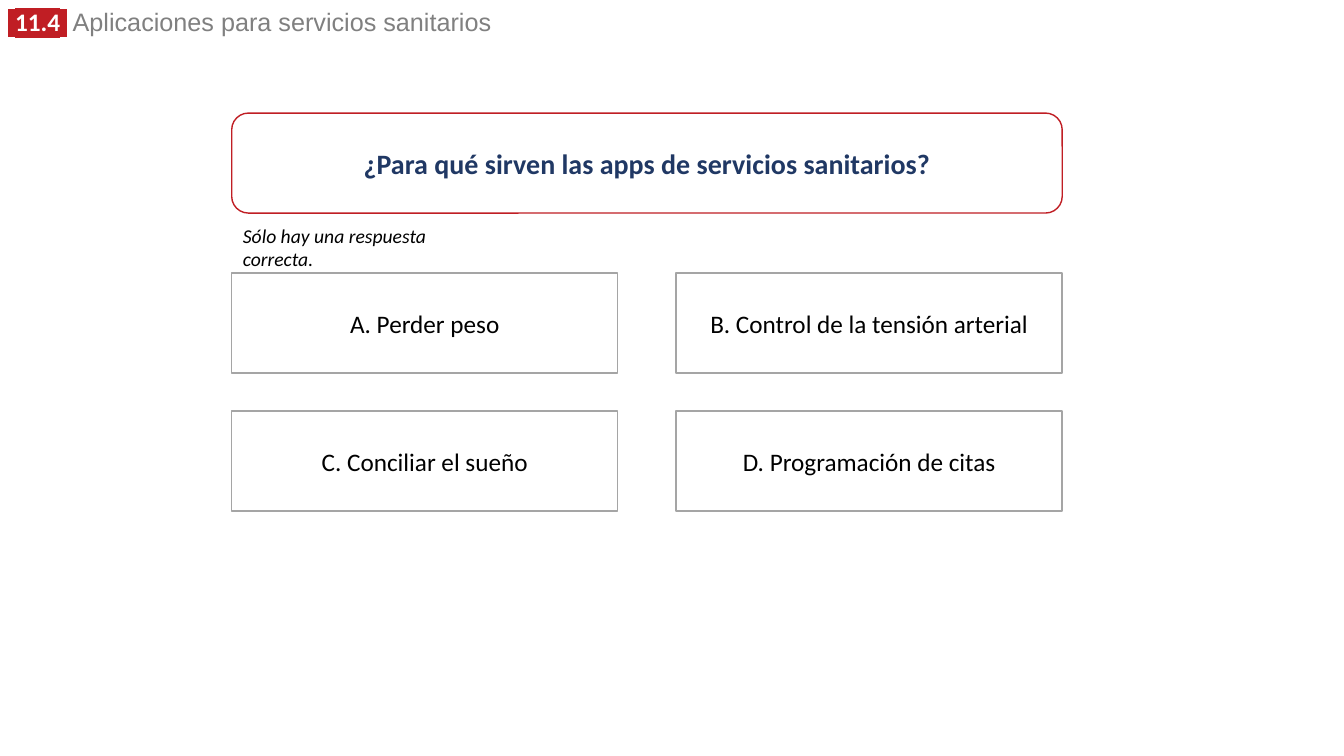
"""Build a quiz slide about health service apps."""
import pptx
import pptx.dml.color
import pptx.enum.shapes
import pptx.enum.text
import pptx.oxml
import pptx.oxml.ns
import pptx.util
from pptx.util import Cm

RGBColor = pptx.dml.color.RGBColor
MSO_SHAPE = pptx.enum.shapes.MSO_SHAPE
PP_ALIGN = pptx.enum.text.PP_ALIGN
MSO_ANCHOR = pptx.enum.text.MSO_ANCHOR

RED = RGBColor(0xC0, 0x1E, 0x24)
NAVY = RGBColor(0x20, 0x38, 0x64)
GRAY = RGBColor(0x80, 0x80, 0x80)
BORDER = RGBColor(0xA5, 0xA5, 0xA5)
WHITE = RGBColor(0xFF, 0xFF, 0xFF)
BLACK = RGBColor(0, 0, 0)


class QuizSlide:
    def __init__(self, slide, font="Calibri"):
        self.s = slide
        self.font = font

    def run(self, p, text, size, color, bold=False, italic=False, font=None, highlight=None):
        r = p.add_run()
        r.text = text
        r.font.size = pptx.util.Pt(size)
        r.font.bold = bold
        r.font.italic = italic
        r.font.color.rgb = color
        r.font.name = font or self.font
        if highlight is not None:
            mark = pptx.oxml.parse_xml(
                f'<a:highlight {pptx.oxml.ns.nsdecls("a")}>'
                f'<a:srgbClr val="{highlight}"/></a:highlight>')
            r.font.fill._xPr.find(pptx.oxml.ns.qn("a:latin")).addprevious(mark)

    def title(self, number, text, left, top, width, height):
        sp = self.s.shapes.title
        sp.left, sp.top, sp.width, sp.height = left, top, width, height
        tf = sp.text_frame
        tf.word_wrap = True
        tf.auto_size = pptx.enum.text.MSO_AUTO_SIZE.SHAPE_TO_FIT_TEXT
        tf.vertical_anchor = MSO_ANCHOR.TOP
        p = tf.paragraphs[0]
        p.alignment = PP_ALIGN.LEFT
        p.line_spacing = 0.8
        for part, font in ((" ", "Arial"), (number, self.font), (" ", "Arial")):
            self.run(p, part, 18, WHITE, bold=True, font=font, highlight=RED)
        self.run(p, " " + text, 18, GRAY, font="Arial")

    def box(self, kind, text, left, top, width, height, line, size, color, bold=False):
        sp = self.s.shapes.add_shape(kind, left, top, width, height)
        sp.shadow.inherit = False
        sp.fill.solid()
        sp.fill.fore_color.rgb = WHITE
        sp.line.color.rgb = line
        sp.line.width = pptx.util.Pt(1)
        tf = sp.text_frame
        tf.word_wrap = True
        tf.vertical_anchor = MSO_ANCHOR.MIDDLE
        p = tf.paragraphs[0]
        p.alignment = PP_ALIGN.CENTER
        self.run(p, text, size, color, bold=bold)

    def note(self, text, left, top, width, height):
        tf = self.s.shapes.add_textbox(left, top, width, height).text_frame
        tf.word_wrap = True
        self.run(tf.paragraphs[0], text, 14, BLACK, italic=True)


def main():
    prs = pptx.Presentation()
    prs.slide_width, prs.slide_height = Cm(33.87), Cm(19.05)
    quiz = QuizSlide(prs.slides.add_slide(prs.slide_layouts[5]))
    quiz.title("11.4", "Aplicaciones para servicios sanitarios",
               Cm(-0.05), Cm(0.18), Cm(24.18), Cm(0.89))
    left, height = Cm(5.84), Cm(2.52)
    quiz.box(MSO_SHAPE.ROUNDED_RECTANGLE, "¿Para qué sirven las apps de servicios sanitarios?",
             left, Cm(2.85), Cm(20.93), height, RED, 20, NAVY, bold=True)
    answers = ("A. Perder peso", "B. Control de la tensión arterial",
               "C. Conciliar el sueño", "D. Programación de citas")
    for i, answer in enumerate(answers):
        row, col = divmod(i, 2)
        quiz.box(MSO_SHAPE.RECTANGLE, answer, left + col * Cm(11.2), Cm(6.88) + row * Cm(3.48),
                 Cm(9.73), height, BORDER, 18, BLACK)
    quiz.note("Sólo hay una respuesta correcta.", Cm(5.87), Cm(5.51), Cm(6), Cm(0.86))
    prs.save("out.pptx")


if __name__ == "__main__":
    main()
